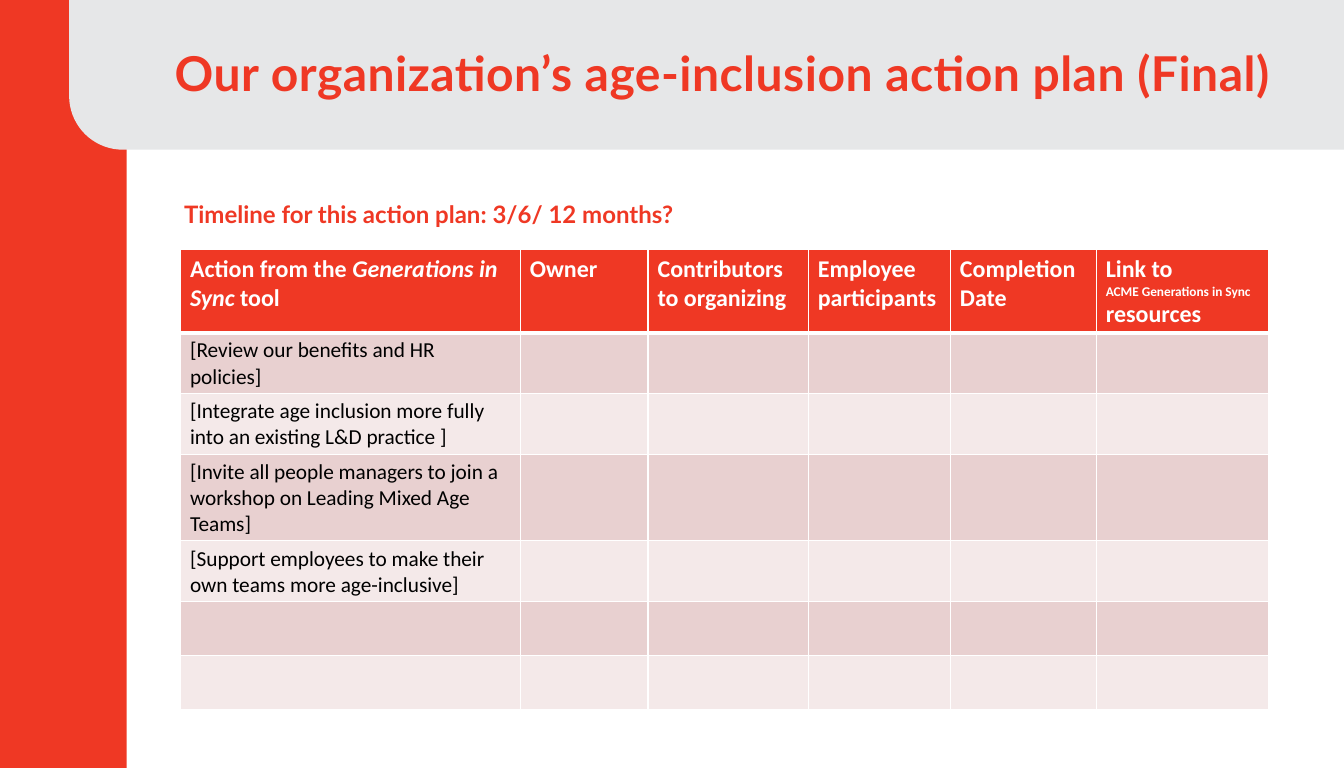
from math import cos, radians, sin

from pptx import Presentation
from pptx.dml.color import RGBColor
from pptx.enum.shapes import MSO_SHAPE as SHAPE
from pptx.enum.text import MSO_ANCHOR as ANCHOR, MSO_AUTO_SIZE as FIT, PP_ALIGN as ALIGN
from pptx.oxml import parse_xml
from pptx.oxml.ns import nsdecls
from pptx.util import Inches, Pt

RED, GREY, WHITE, BLACK = "EF3824", "E6E7E8", "FFFFFF", "000000"
BANDS = ("E8D0D0", "F4E9E9")
COLUMNS, ROWS = 14, 8


def rgb(value):
    return RGBColor.from_string(value)


class Deck:
    heading_font = "Lato"
    body_font = "Calibri"

    def __init__(self, width, height):
        self.prs = Presentation()
        self.prs.slide_width, self.prs.slide_height = Inches(width), Inches(height)
        self.s = self.prs.slides.add_slide(self.prs.slide_layouts[5])

    def x(self, columns):
        return round(self.prs.slide_width * columns / COLUMNS)

    def y(self, rows):
        return round(self.prs.slide_height * rows / ROWS)

    def box(self, left, top, width, height):
        return self.x(left), self.y(top), self.x(width), self.y(height)

    def paint(self, sp, color):
        sp.shadow.inherit = False
        sp.fill.solid()
        sp.fill.fore_color.rgb = rgb(color)
        sp.line.fill.background()

    def style(self, r, size, color, font, bold=False, italic=False):
        r.font.size, r.font.name = Pt(size), font
        r.font.bold, r.font.italic = bold, italic
        r.font.color.rgb = rgb(color)

    def bar(self, left, top, width, height, color):
        sp = self.s.shapes.add_shape(SHAPE.RECTANGLE, *self.box(left, top, width, height))
        self.paint(sp, color)

    def header_panel(self, left, bottom, radius, color):
        angles = [radians(a) for a in range(180, 89, -5)]
        curve = [(left + radius * (1 + cos(a)), bottom - radius * (1 - sin(a))) for a in angles]
        points = [(left, 0), *curve, (COLUMNS, bottom)]
        builder = self.s.shapes.build_freeform(self.x(COLUMNS), 0)
        builder.add_line_segments([(self.x(a), self.y(b)) for a, b in points])
        self.paint(builder.convert_to_shape(), color)

    def heading(self, sp, text, size, before, after=0):
        tf = sp.text_frame
        tf.text = text
        tf.word_wrap, tf.auto_size = True, FIT.SHAPE_TO_FIT_TEXT
        tf.vertical_anchor = ANCHOR.TOP
        p = tf.paragraphs[0]
        p.alignment = ALIGN.LEFT
        p.space_before, p.space_after = Pt(before), Pt(after)
        p._p.get_or_add_pPr().set("marL", str(self.x(0.01)))
        self.style(p.runs[0], size, RED, self.heading_font, bold=True)
        return tf

    def title(self, left, top, width, height, text):
        sp = self.s.shapes.title
        sp._element.getparent().append(sp._element)
        sp.left, sp.top, sp.width, sp.height = self.box(left, top, width, height)
        tf = self.heading(sp, text, 36, 1.1)
        tf.margin_left = tf.margin_right = tf.margin_bottom = 0
        tf.margin_top = self.y(0.02)
        tf.paragraphs[0].runs[0].font._element.set("spc", "40")

    def label(self, left, top, width, height, text):
        sp = self.s.shapes.add_textbox(*self.box(left, top, width, height))
        self.heading(sp, text, 18, 1, 6)

    def cell(self, cell, color, top=1, bottom=1):
        tcPr = cell._tc.get_or_add_tcPr()
        for side, width in zip("LRTB", (1, 1, top, bottom)):
            tcPr.append(parse_xml(
                f'<a:ln{side} {nsdecls("a")} w="{Pt(width)}"><a:solidFill>'
                f'<a:srgbClr val="{WHITE}"/></a:solidFill></a:ln{side}>'))
        cell.fill.solid()
        cell.fill.fore_color.rgb = rgb(color)

    def table(self, left, top, widths, row_height, header, actions, count):
        place = self.box(left, top, sum(widths), row_height * count)
        table = self.s.shapes.add_table(count, len(widths), *place).table
        for column, width in zip(table.columns, widths):
            column.width = self.x(width)
        for i, row in enumerate(table.rows):
            for cell in row.cells:
                if i == 0:
                    self.cell(cell, RED, bottom=3)
                else:
                    self.cell(cell, BANDS[(i - 1) % 2], top=3 if i == 1 else 1)
        for j, paragraphs in enumerate(header):
            tf = table.cell(0, j).text_frame
            for k, runs in enumerate(paragraphs):
                p = tf.add_paragraph() if k else tf.paragraphs[0]
                for text, size, italic in runs:
                    r = p.add_run()
                    r.text = text
                    self.style(r, size, WHITE, self.body_font, True, italic)
        for i, action in enumerate(actions, 1):
            tf = table.cell(i, 0).text_frame
            tf.text = action
            self.style(tf.paragraphs[0].runs[0], 16, BLACK, self.body_font)


def plain(text):
    return [[(text, 18, False)]]


HEADER = [
    [[("Action from the ", 18, False), ("Generations in Sync", 18, True), (" tool", 18, False)]],
    plain("Owner"),
    plain("Contributors to organizing"),
    plain("Employee participants"),
    plain("Completion Date"),
    [[("Link to", 18, False)],
     [("ACME Generations in Sync ", 10, False), ("resources", 18, False)]],
]
ACTIONS = [
    "[Review our benefits and HR policies]",
    "[Integrate age inclusion more fully into an existing L&D practice ]",
    "[Invite all people managers to join a workshop on Leading Mixed Age Teams]",
    "[Support employees to make their own teams more age-inclusive]",
]


def main():
    deck = Deck(14, 8)
    deck.bar(0, 0, 1.32, ROWS, RED)
    deck.header_panel(0.72, 1.56, 0.56, GREY)
    deck.title(1.81, 0.43, 11.69, 0.62, "Our organization’s age-inclusion action plan (Final)")
    deck.table(1.88, 2.6, [3.54, 1.33, 1.67, 1.48, 1.52, 1.8], 0.56, HEADER, ACTIONS, 7)
    deck.label(1.81, 2.03, 7, 0.4, "Timeline for this action plan: 3/6/ 12 months?")
    deck.prs.save("out.pptx")


if __name__ == "__main__":
    main()
